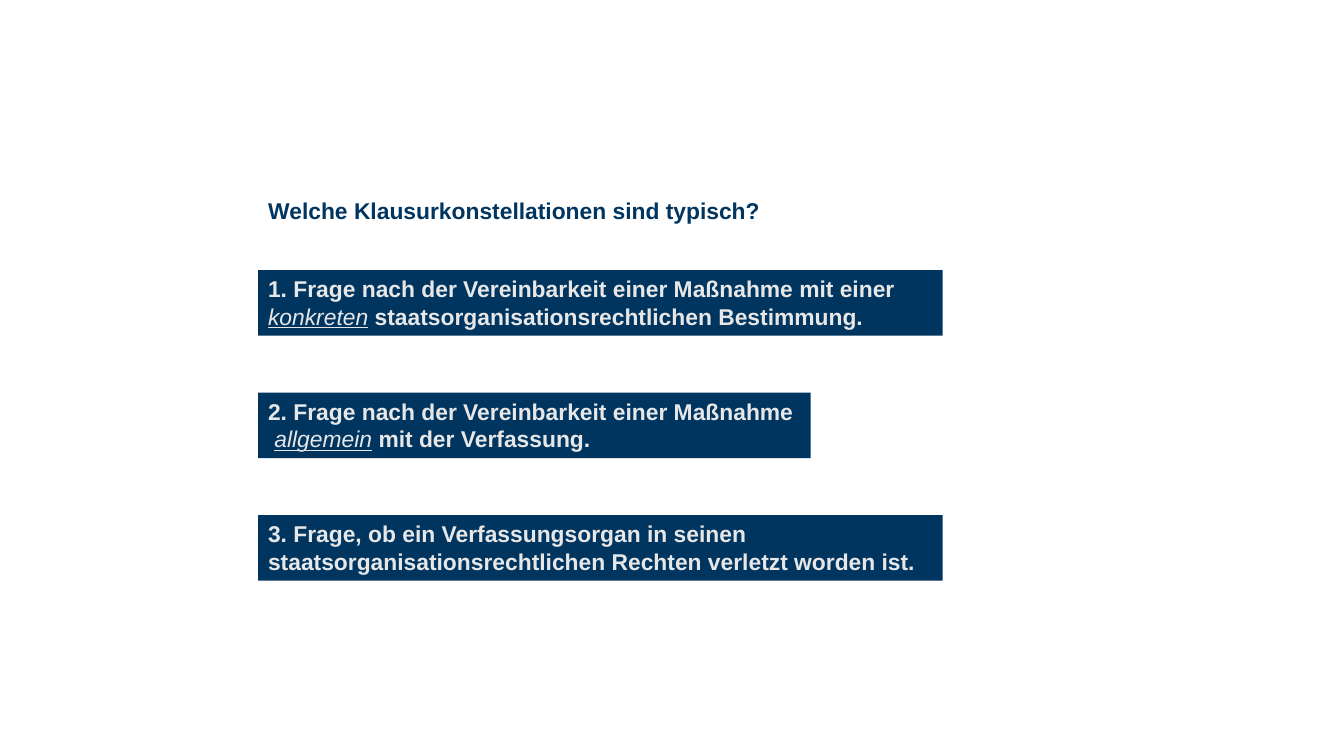
from pptx import Presentation
from pptx.dml.color import RGBColor
from pptx.enum.shapes import MSO_SHAPE as Shape
from pptx.enum.text import MSO_ANCHOR as Anchor, MSO_AUTO_SIZE as AutoSize, PP_ALIGN as Align
from pptx.util import Inches, Pt

COLORS = {"navy": "003560", "light": "E7E7E7"}
FONT = {"name": "Arial", "size": Pt(16.3)}
BOLD = {"bold": True, "italic": False, "underline": False}
STRESSED = {"bold": False, "italic": True, "underline": True}

LEFT = 2.56
TITLE_BOX = (LEFT, 1.9, 7.56, 0.38)
FIRST_TOP, PITCH, BOX_HEIGHT = 2.68, 1.215, 0.65
WIDE, NARROW = 6.79, 5.48

CASES = [
    (WIDE, True, [[("1. Frage nach der Vereinbarkeit einer Maßnahme mit einer ", BOLD),
                   ("konkreten", STRESSED),
                   (" staatsorganisationsrechtlichen Bestimmung.", BOLD)]]),
    (NARROW, False, [[("2. Frage nach der Vereinbarkeit einer Maßnahme", BOLD)],
                     [(" ", BOLD), ("allgemein", STRESSED), (" mit der Verfassung.", BOLD)]]),
    (WIDE, True, [[("3. Frage, ob ein Verfassungsorgan in seinen "
                    "staatsorganisationsrechtlichen Rechten verletzt worden ist.", BOLD)]]),
]


def set_all(target, values):
    """Set every attribute in values on target."""
    for name, value in values.items():
        setattr(target, name, value)


def write(frame, paragraphs, color, wrap=True):
    """Fill a text frame with left-aligned paragraphs of formatted spans."""
    set_all(frame, {"word_wrap": wrap, "auto_size": AutoSize.SHAPE_TO_FIT_TEXT,
                    "vertical_anchor": Anchor.TOP})
    for index, spans in enumerate(paragraphs):
        para = frame.add_paragraph() if index else frame.paragraphs[0]
        para.alignment = Align.LEFT
        for text, style in spans:
            span = para.add_run()
            span.text = text
            set_all(span.font, {**FONT, **style})
            span.font.color.rgb = RGBColor.from_string(COLORS[color])


def place_title(page, box, text):
    """Move the title placeholder into box and write the heading."""
    title = page.shapes.title
    set_all(title, dict(zip(("left", "top", "width", "height"), map(Inches, box))))
    write(title.text_frame, [[(text, BOLD)]], "navy")


def add_case(page, box, paragraphs, wrap):
    """Draw one filled case box with its text."""
    case = page.shapes.add_shape(Shape.RECTANGLE, *map(Inches, box))
    case.shadow.inherit = False
    case.fill.solid()
    case.fill.fore_color.rgb = RGBColor.from_string(COLORS["navy"])
    case.line.fill.background()
    write(case.text_frame, paragraphs, "light", wrap)


def main():
    """Build the slide and save the deck."""
    deck = Presentation()
    set_all(deck, {"slide_width": Inches(13.33), "slide_height": Inches(7.5)})
    page = deck.slides.add_slide(deck.slide_layouts[5])
    place_title(page, TITLE_BOX, "Welche Klausurkonstellationen sind typisch?")
    for row, (width, wrap, paragraphs) in enumerate(CASES):
        add_case(page, (LEFT, FIRST_TOP + row * PITCH, width, BOX_HEIGHT), paragraphs, wrap)
    deck.save("out.pptx")


if __name__ == "__main__":
    main()
